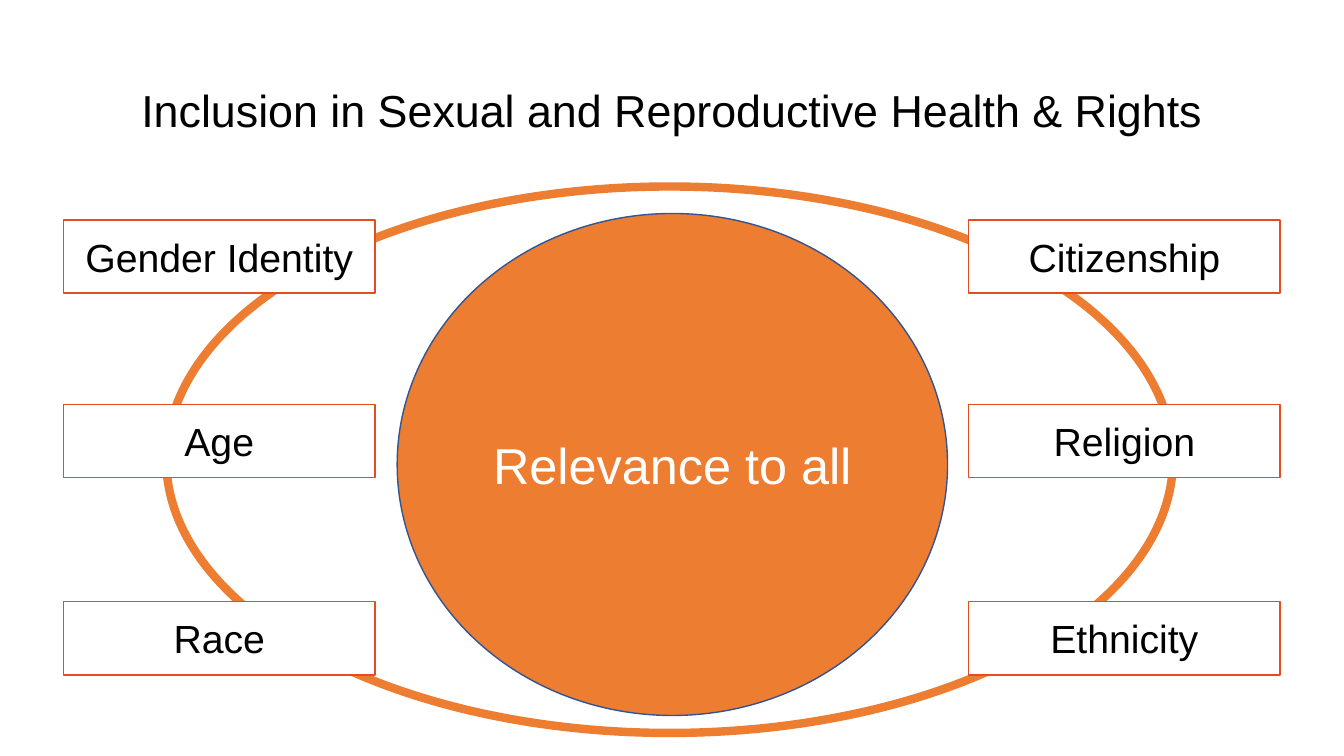
"""Build the slide on inclusion in sexual and reproductive health and rights."""
from dataclasses import dataclass
from typing import Optional

import pptx
import pptx.dml.color
import pptx.enum.shapes
import pptx.enum.text
import pptx.util

Cm = pptx.util.Cm
Pt = pptx.util.Pt
MSO_SHAPE = pptx.enum.shapes.MSO_SHAPE

COLORS = {
    "orange": "ED7D31",
    "navy": "325491",
    "red": "E44D24",
    "white": "FFFFFF",
    "black": "000000",
}

BOX_W, BOX_H = 7.85, 1.85
ROW_TOPS = (5.54, 10.19, 15.16)
COLUMNS = {
    1.6: ("Gender Identity", "Age", "Race"),
    24.41: ("Citizenship", "Religion", "Ethnicity"),
}


@dataclass
class Label:
    text: str
    size: int
    color: str
    spacing: float = 1.0


@dataclass
class Figure:
    kind: MSO_SHAPE
    left: float
    top: float
    width: float
    height: float
    fill: Optional[str]
    line: str
    weight: float
    label: Optional[Label] = None


def rgb(name: str) -> pptx.dml.color.RGBColor:
    return pptx.dml.color.RGBColor.from_string(COLORS[name])


def write_label(tf, label: Label) -> None:
    tf.word_wrap = True
    tf.vertical_anchor = pptx.enum.text.MSO_ANCHOR.MIDDLE
    p = tf.paragraphs[0]
    p.alignment = pptx.enum.text.PP_ALIGN.CENTER
    p.line_spacing = label.spacing
    r = p.add_run()
    r.text = label.text
    r.font.name = "Arial"
    r.font.size = Pt(label.size)
    r.font.color.rgb = rgb(label.color)


def draw_figure(s, fig: Figure) -> None:
    sp = s.shapes.add_shape(
        fig.kind, Cm(fig.left), Cm(fig.top), Cm(fig.width), Cm(fig.height)
    )
    sp.shadow.inherit = False
    if fig.fill:
        sp.fill.solid()
        sp.fill.fore_color.rgb = rgb(fig.fill)
    else:
        sp.fill.background()
    sp.line.color.rgb = rgb(fig.line)
    sp.line.width = Pt(fig.weight)
    if fig.label:
        write_label(sp.text_frame, fig.label)


def main() -> None:
    prs = pptx.Presentation()
    prs.slide_width, prs.slide_height = Cm(33.87), Cm(19.05)
    s = prs.slides.add_slide(prs.slide_layouts[6])

    ring = Figure(MSO_SHAPE.OVAL, 4.19, 4.7, 25.37, 13.77, None, "orange", 6)
    draw_figure(s, ring)

    title = s.shapes.add_textbox(Cm(2.34), Cm(1.02), Cm(29.21), Cm(3.68))
    heading = "Inclusion in Sexual and Reproductive Health & Rights"
    write_label(title.text_frame, Label(heading, 32, "black", 0.9))

    core = Figure(MSO_SHAPE.OVAL, 10.01, 5.38, 13.87, 12.65, "orange", "navy", 1,
                  Label("Relevance to all", 36, "white"))
    draw_figure(s, core)

    for left, topics in COLUMNS.items():
        for top, topic in zip(ROW_TOPS, topics):
            box = Figure(MSO_SHAPE.RECTANGLE, left, top, BOX_W, BOX_H,
                         "white", "red", 1, Label(topic, 28, "black"))
            draw_figure(s, box)

    prs.save("out.pptx")


if __name__ == "__main__":
    main()
